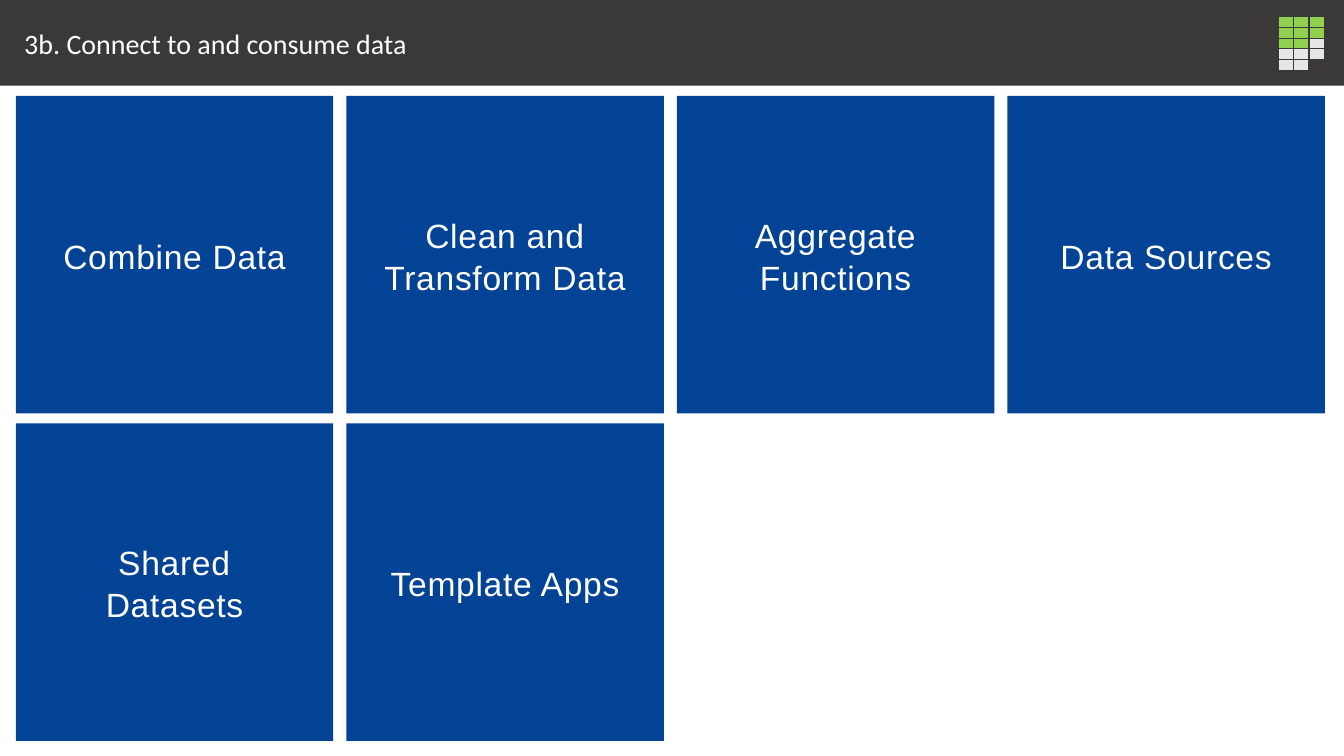
from lxml.etree import SubElement as Sub
from pptx import Presentation
from pptx.dml.color import RGBColor as RGB
from pptx.enum.shapes import MSO_SHAPE as Shape
from pptx.enum.text import MSO_ANCHOR as Anchor, PP_ALIGN as Align
from pptx.oxml import parse_xml
from pptx.oxml.ns import nsdecls, qn
from pptx.util import Cm, Pt


def paint(fill, hue):
    fill.solid()
    fill.fore_color.rgb = RGB.from_string(hue)


def write(frame, text, font, size, align):
    frame.word_wrap = True
    frame.vertical_anchor = Anchor.MIDDLE
    para = frame.paragraphs[0]
    para.alignment = align
    para.font.name, para.font.size = font, Pt(size)
    paint(para.font.fill, "FFFFFF")
    run = para.add_run()
    run.text = text
    return para, run


deck = Presentation()
deck.slide_width, deck.slide_height = Cm(33.87), Cm(19.05)
slide = deck.slides.add_slide(deck.slide_layouts[5])

# Title bar
bar = slide.shapes.title
bar.left, bar.top, bar.width, bar.height = 0, 0, deck.slide_width, Cm(2.16)
paint(bar.fill, "3B3838")
frame = bar.text_frame
frame.margin_left, frame.margin_right = Cm(0.61), Cm(0.25)
frame.margin_top = frame.margin_bottom = Cm(0.13)
write(frame, "3b. Connect to and consume data", "Calibri", 20, Align.LEFT)

# Topic tiles, four to a row
topics = ["Combine Data", "Clean and Transform Data", "Aggregate Functions",
          "Data Sources", "Shared Datasets", "Template Apps"]
for i, topic in enumerate(topics):
    row, col = divmod(i, 4)
    tile = slide.shapes.add_shape(Shape.RECTANGLE, Cm(0.4 + 8.33 * col),
                                  Cm(2.42 + 8.25 * row), Cm(8), Cm(8))
    tile.shadow.inherit = False
    paint(tile.fill, "034395")
    tile.line.fill.background()
    frame = tile.text_frame
    frame.margin_left = frame.margin_right = Cm(0.79)
    frame.margin_top = frame.margin_bottom = Cm(0.79)
    para, run = write(frame, topic, "Arial", 24, Align.CENTER)
    para.line_spacing = 1.05
    run._r.get_or_add_rPr().set("spc", "50")

# Progress grid: G done, W to do, D blank
hues = {"G": "92D050", "W": "E7E6E6", "D": "3D3838"}
marks = ["GGG", "GGG", "GGW", "WWW", "WWD"]
grid = slide.shapes.add_table(5, 3, Cm(32.21), Cm(0.42), Cm(1.17), Cm(1.35)).table
grid.first_row = grid.horz_banding = False
for col in grid.columns:
    col.width = Cm(0.39)
for r, line in enumerate(marks):
    grid.rows[r].height = Cm(0.27)
    for c, mark in enumerate(line):
        cell = grid.cell(r, c)
        cell.margin_left = cell.margin_right = 0
        cell.margin_top = cell.margin_bottom = 0
        paint(cell.fill, hues[mark])
        # Small type keeps the empty rows low
        Sub(cell.text_frame.paragraphs[0]._p, qn("a:endParaRPr"), sz="100")
        props = cell._tc.get_or_add_tcPr()
        for n, side in enumerate("LRTB"):
            props.insert(n, parse_xml(
                f'<a:ln{side} w="12700" {nsdecls("a")}><a:solidFill>'
                f'<a:srgbClr val="3B3938"/></a:solidFill></a:ln{side}>'))

deck.save("out.pptx")
